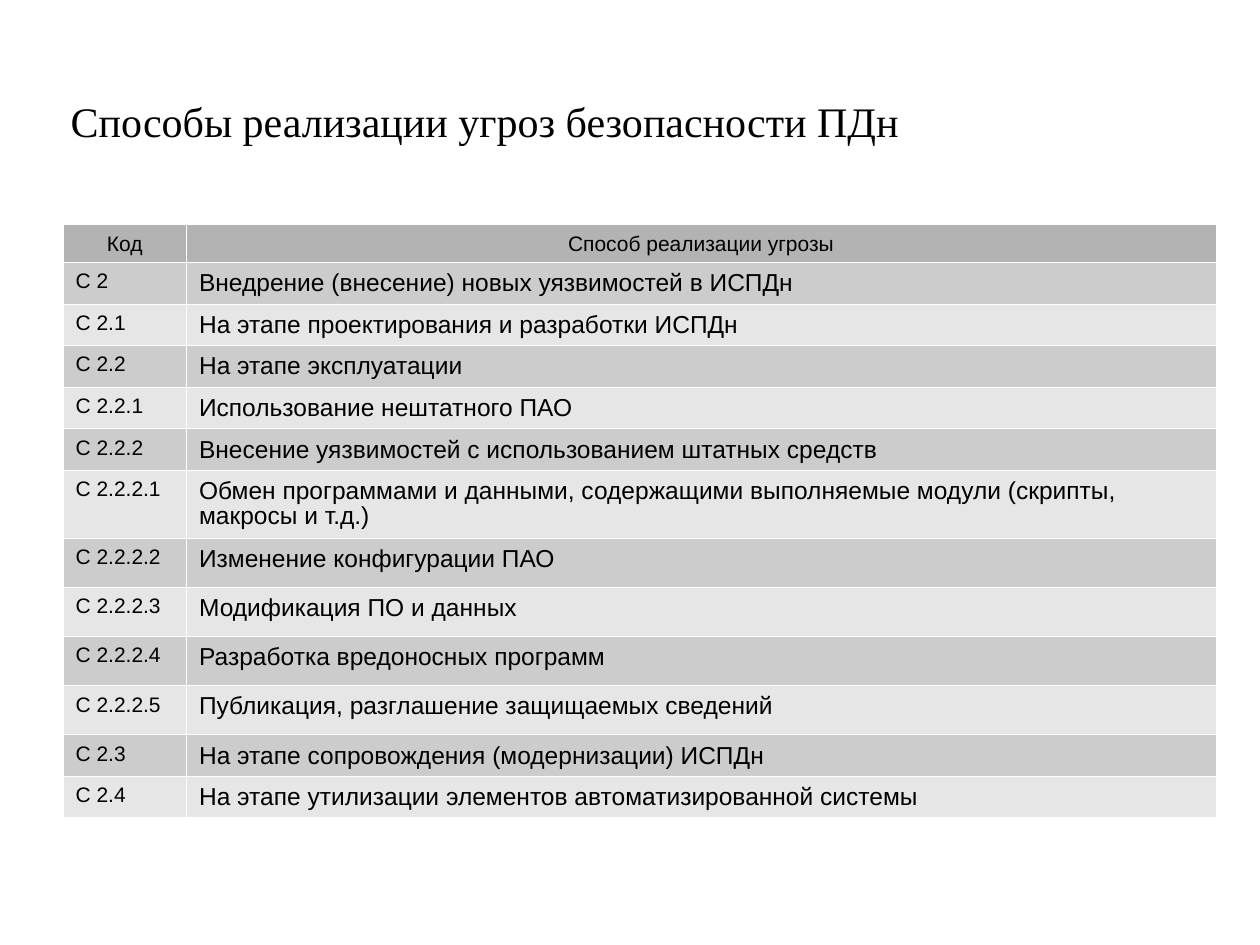
"""Build a slide with a table of the ways personal data threats are carried out."""
from lxml.etree import SubElement
from pptx import Presentation
from pptx.dml.color import RGBColor
from pptx.enum.text import MSO_ANCHOR, PP_ALIGN
from pptx.oxml.ns import qn
from pptx.util import Inches, Pt

TITLE = "Способы реализации угроз безопасности ПДн"
HEADER = ("Код", "Способ реализации угрозы")
THREATS = [
    ("С 2", "Внедрение (внесение) новых уязвимостей в ИСПДн", 0.33),
    ("С 2.1", "На этапе проектирования и разработки ИСПДн", 0.33),
    ("С 2.2", "На этапе эксплуатации", 0.33),
    ("С 2.2.1", "Использование нештатного ПАО", 0.33),
    ("С 2.2.2", "Внесение уязвимостей с использованием штатных средств", 0.33),
    ("С 2.2.2.1", "Обмен программами и данными, содержащими выполняемые модули "
                  "(скрипты, макросы и т.д.)", 0.54),
    ("С 2.2.2.2", "Изменение конфигурации ПАО", 0.39),
    ("С 2.2.2.3", "Модификация ПО и данных", 0.39),
    ("С 2.2.2.4", "Разработка вредоносных программ", 0.39),
    ("С 2.2.2.5", "Публикация, разглашение защищаемых сведений", 0.39),
    ("С 2.3", "На этапе сопровождения (модернизации) ИСПДн", 0.33),
    ("С 2.4", "На этапе утилизации элементов автоматизированной системы", 0.33),
]
COLUMN_WIDTHS = (0.98, 8.17)
HEADER_HEIGHT = 0.3
BORDER_WIDTH = Pt(0.06)

BLACK = RGBColor(0x00, 0x00, 0x00)
WHITE = RGBColor(0xFF, 0xFF, 0xFF)
HEADER_GRAY = RGBColor(0xB3, 0xB3, 0xB3)
BAND_GRAYS = (RGBColor(0xCC, 0xCC, 0xCC), RGBColor(0xE6, 0xE6, 0xE6))


def format_text(para, font_name, size, align):
    para.alignment = align
    for span in para.runs:
        span.font.name = font_name
        span.font.size = Pt(size)
        span.font.color.rgb = BLACK


def add_title(page):
    title = page.shapes.title
    title.left, title.top = Inches(0.46), Inches(0.71)
    title.width, title.height = Inches(8.91), Inches(0.71)
    frame = title.text_frame
    frame.text = TITLE
    frame.word_wrap = True
    frame.vertical_anchor = MSO_ANCHOR.TOP
    format_text(frame.paragraphs[0], "Times New Roman", 24, PP_ALIGN.LEFT)


def set_borders(cell):
    properties = cell._tc.get_or_add_tcPr()
    for index, side in enumerate(("lnL", "lnR", "lnT", "lnB")):
        line = properties.makeelement(qn(f"a:{side}"), {"w": str(BORDER_WIDTH)})
        fill = SubElement(line, qn("a:solidFill"))
        SubElement(fill, qn("a:srgbClr"), val=str(WHITE))
        properties.insert(index, line)


def fill_cell(cell, text, size, align, color):
    cell.text_frame.text = text
    cell.margin_left = cell.margin_right = Inches(0.1)
    cell.margin_top, cell.margin_bottom = Inches(0.08), Inches(0.05)
    para = cell.text_frame.paragraphs[0]
    para.line_spacing = 0.89
    format_text(para, "Arial", size, align)
    cell.fill.solid()
    cell.fill.fore_color.rgb = color
    set_borders(cell)


def add_threat_table(page):
    heights = [HEADER_HEIGHT] + [height for _, _, height in THREATS]
    table = page.shapes.add_table(
        len(heights), len(COLUMN_WIDTHS), Inches(0.5), Inches(1.78),
        Inches(sum(COLUMN_WIDTHS)), Inches(sum(heights))).table
    for column, width in zip(table.columns, COLUMN_WIDTHS):
        column.width = Inches(width)
    for row, height in zip(table.rows, heights):
        row.height = Inches(height)
    for column, text in enumerate(HEADER):
        fill_cell(table.cell(0, column), text, 12, PP_ALIGN.CENTER, HEADER_GRAY)
    for index, (code, method, _) in enumerate(THREATS):
        color = BAND_GRAYS[index % 2]
        fill_cell(table.cell(index + 1, 0), code, 12, PP_ALIGN.LEFT, color)
        fill_cell(table.cell(index + 1, 1), method, 14, PP_ALIGN.LEFT, color)


def main():
    deck = Presentation()
    deck.slide_width, deck.slide_height = Inches(10), Inches(7.5)
    page = deck.slides.add_slide(deck.slide_layouts[5])
    add_title(page)
    add_threat_table(page)
    deck.save("out.pptx")


if __name__ == "__main__":
    main()
